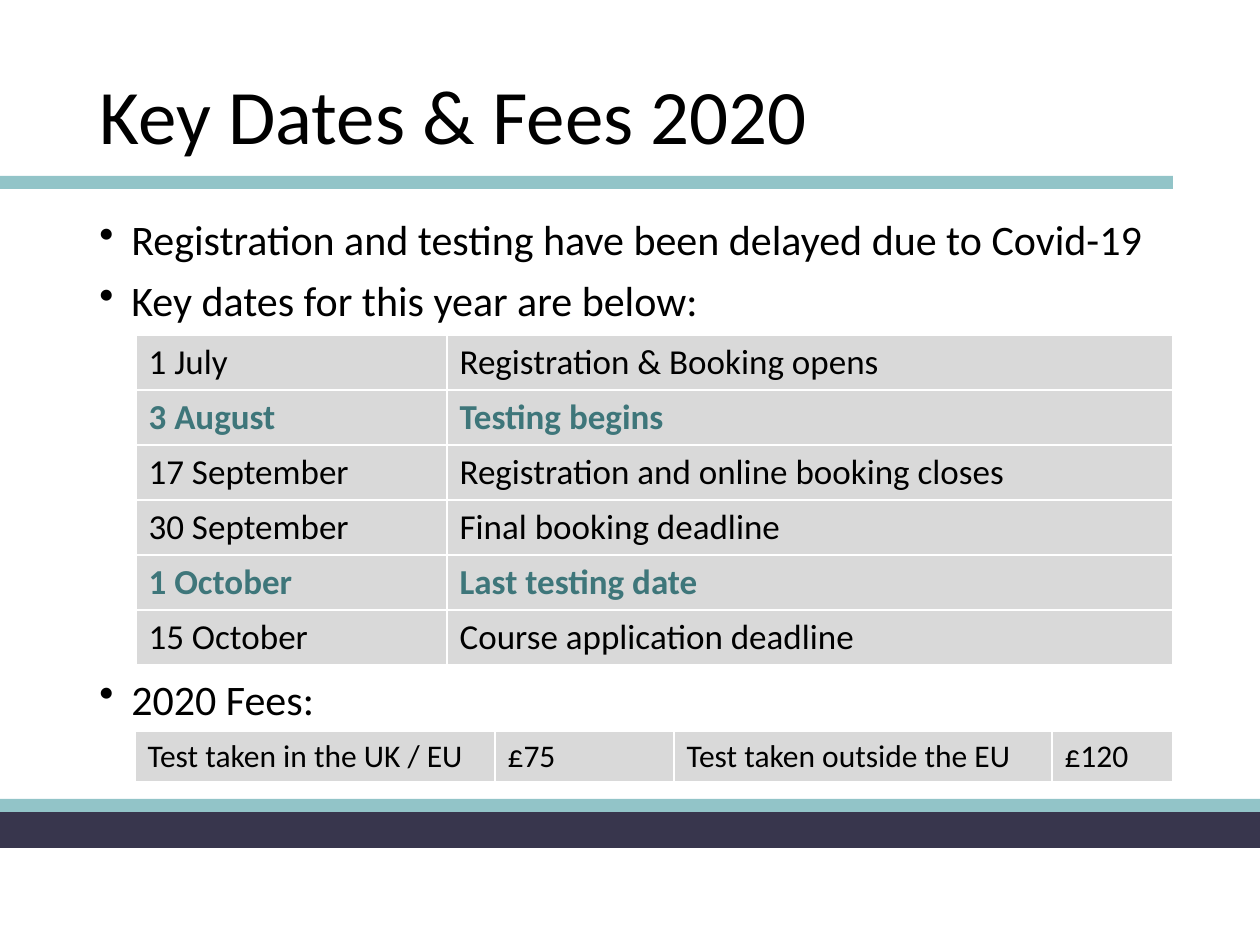
from lxml import etree
from pptx import Presentation
from pptx.dml.color import RGBColor
from pptx.enum.shapes import MSO_SHAPE
from pptx.enum.text import MSO_ANCHOR, PP_ALIGN
from pptx.oxml.ns import qn
from pptx.util import Pt

RECT = MSO_SHAPE.RECTANGLE
MIDDLE = MSO_ANCHOR.MIDDLE
LEFT = PP_ALIGN.LEFT

FONT = "Calibri"
BLACK = "000000"
WHITE = "FFFFFF"
GREY = "D9D9D9"
AQUA = "92C4C8"
TEAL = "3E767A"
NAVY = "38364D"

DATES = [
    ("1 July", "Registration & Booking opens"),
    ("3 August", "Testing begins"),
    ("17 September", "Registration and online booking closes"),
    ("30 September", "Final booking deadline"),
    ("1 October", "Last testing date"),
    ("15 October", "Course application deadline"),
]
FEES = [("Test taken in the UK / EU", "£75", "Test taken outside the EU", "£120")]
TEST_ROWS = (1, 4)


def px(n):
    return round(n * 914400 / 126)


def color(code):
    return RGBColor.from_string(code)


def style(para, size, code=BLACK, bold=False):
    font = para.font
    font.name = FONT
    font.size = Pt(size)
    font.bold = bold
    font.color.rgb = color(code)


def add_bar(slide, top, width, height, code):
    bar = slide.shapes.add_shape(RECT, 0, px(top), px(width), px(height))
    bar.shadow.inherit = False
    bar.fill.solid()
    bar.fill.fore_color.rgb = color(code)
    bar.line.fill.background()


def set_title(slide, text):
    title = slide.shapes.title
    title.left, title.top, title.width, title.height = map(px, (87, 50, 1086, 139))
    frame = title.text_frame
    frame.text = text
    frame.vertical_anchor = MIDDLE
    para = frame.paragraphs[0]
    para.alignment = LEFT
    para.line_spacing = 0.9
    style(para, 44)


def add_list(slide, top, height, lines, space):
    box = slide.shapes.add_textbox(px(87), px(top), px(1086), px(height))
    frame = box.text_frame
    frame.word_wrap = True
    for i, text in enumerate(lines):
        para = frame.add_paragraph() if i else frame.paragraphs[0]
        para.text = text
        props = para._p.get_or_add_pPr()
        props.set("marL", str(px(32)))
        props.set("indent", str(-px(32)))
        etree.SubElement(props, qn("a:buChar"), char="•")
        para.line_spacing = space
        para.space_before = Pt(5 if i else 0)
        para.space_after = Pt(4)
        style(para, 24)


def add_edges(cell):
    props = cell._tc.get_or_add_tcPr()
    for side in ("lnL", "lnR", "lnT", "lnB"):
        line = etree.SubElement(props, qn("a:" + side), w=str(Pt(1)))
        fill = etree.SubElement(line, qn("a:solidFill"))
        etree.SubElement(fill, qn("a:srgbClr"), val=WHITE)


def add_grid(slide, left, top, widths, height, rows, size, marked=()):
    frame = slide.shapes.add_table(
        len(rows), len(widths), px(left), px(top),
        px(sum(widths)), px(height * len(rows)))
    table = frame.table
    table.first_row = False
    table.horz_banding = False
    for col, width in zip(table.columns, widths):
        col.width = px(width)
    for r, row in enumerate(rows):
        table.rows[r].height = px(height)
        for c, text in enumerate(row):
            cell = table.cell(r, c)
            cell.text = text
            add_edges(cell)
            cell.fill.solid()
            cell.fill.fore_color.rgb = color(GREY)
            mark = r in marked
            style(cell.text_frame.paragraphs[0], size, TEAL if mark else BLACK, mark)


def main():
    deck = Presentation()
    deck.slide_width, deck.slide_height = px(1260), px(945)
    slide = deck.slides.add_slide(deck.slide_layouts[5])
    add_bar(slide, 810, 1260, 38, NAVY)
    add_bar(slide, 799, 1260, 13, AQUA)
    add_bar(slide, 176, 1173, 13, AQUA)
    set_title(slide, "Key Dates & Fees 2020")
    add_list(slide, 213, 122, [
        "Registration and testing have been delayed due to Covid-19",
        "Key dates for this year are below:",
    ], 0.9)
    add_grid(slide, 136, 335, (311, 726), 55, DATES, 20, TEST_ROWS)
    add_grid(slide, 135, 731, (360, 179, 378, 121), 50, FEES, 18)
    add_list(slide, 677, 55, ["2020 Fees:"], 0.8)
    deck.save("out.pptx")


if __name__ == "__main__":
    main()
